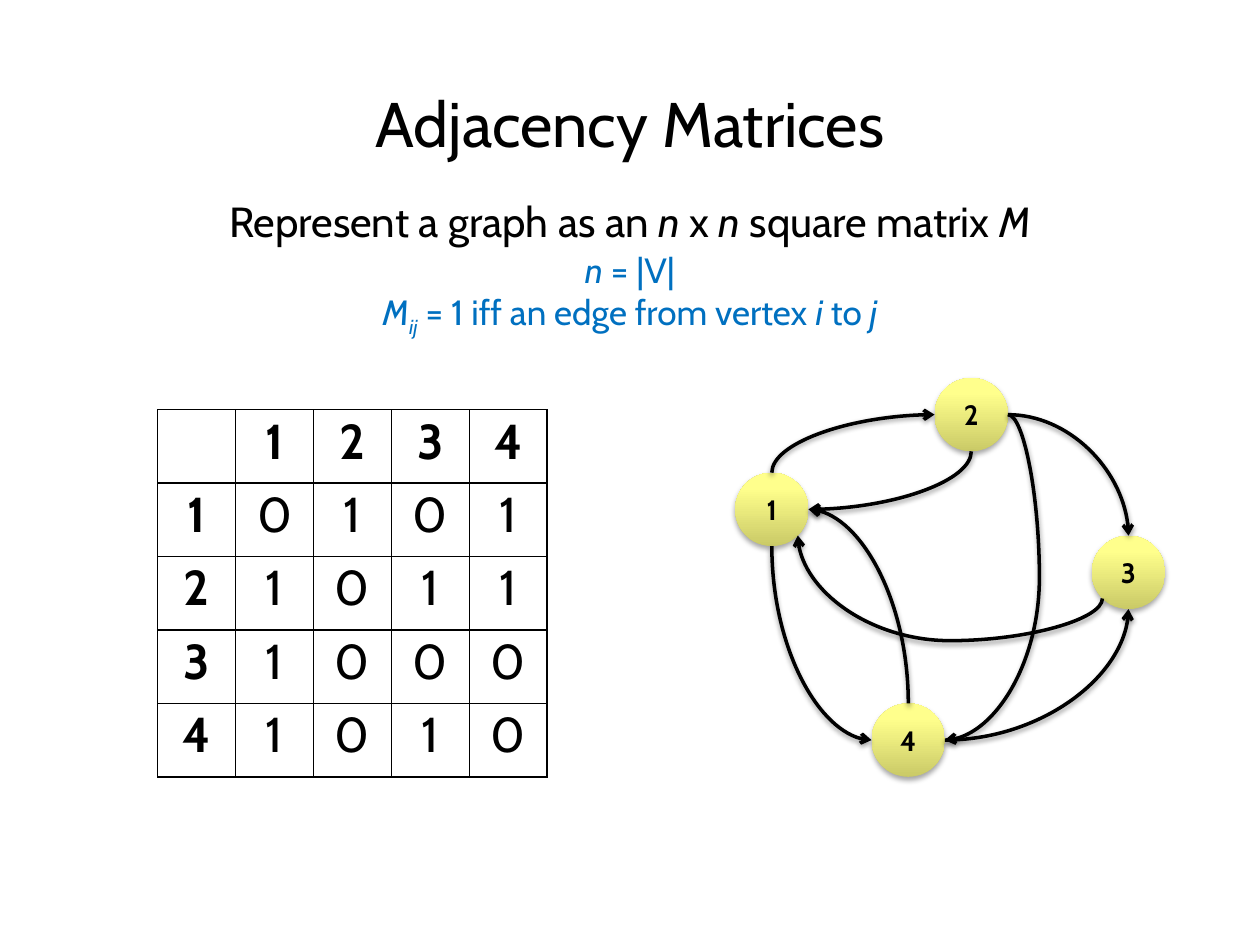
from pptx import Presentation
from pptx import util as u
from pptx.dml.color import RGBColor
from pptx.enum import shapes, text
from pptx.oxml import parse_xml
from pptx.oxml.ns import nsdecls

MATRIX = [
    [0, 1, 0, 1],
    [1, 0, 1, 1],
    [1, 0, 0, 0],
    [1, 0, 1, 0],
]
RADIUS = 0.74
VERTICES = {1: (15.56, 10.27), 2: (19.58, 8.36), 3: (22.75, 11.54), 4: (18.31, 14.92)}
DIAGONAL = 0.71
SIDES = {
    "top": (0, -1), "bottom": (0, 1), "left": (-1, 0), "right": (1, 0),
    "bottom left": (-DIAGONAL, DIAGONAL), "bottom right": (DIAGONAL, DIAGONAL),
}
# start vertex, side, end vertex, side, rotation, bend (None for a simple corner)
EDGES = [
    (1, "top", 2, "left", 90, None),
    (1, "bottom", 4, "left", 270, None),
    (2, "bottom", 1, "right", 90, None),
    (2, "right", 3, "top", 0, None),
    (2, "right", 4, "right", 0, -0.5),
    (3, "bottom left", 1, "bottom right", 90, -0.67),
    (4, "top", 1, "right", 270, None),
    (4, "right", 3, "bottom", 0, None),
]


def color(value):
    return RGBColor.from_string(value)


def drawing_xml(tag, attributes, content=""):
    """Parse one element of the DrawingML namespace."""
    return parse_xml(f'<a:{tag} {nsdecls("a")} {attributes}>{content}</a:{tag}>')


def drop_shadow(distance, opacity):
    return drawing_xml("effectLst", "", (
        f'<a:outerShdw blurRad="{u.Pt(3.1)}" dist="{u.Pt(distance)}" dir="5400000" rotWithShape="0">'
        f'<a:srgbClr val="000000"><a:alpha val="{opacity * 1000}"/></a:srgbClr></a:outerShdw>'))


def port(vertex, side):
    """Point on the rim of a vertex, in centimetres."""
    return [center + RADIUS * step for center, step in zip(VERTICES[vertex], SIDES[side])]


class SlideBuilder:
    font = "Cabin"
    ink = "000000"
    accent = "0070C0"
    gradient = [(0, "CACA67"), (80, "FFFF8C"), (100, "FFFF8E")]

    def __init__(self, slide):
        self.slide = slide

    def format(self, paragraph, size, ink=None, bold=False):
        paragraph.alignment = text.PP_ALIGN.CENTER
        for run in paragraph.runs:
            run.font.name = self.font
            run.font.size = u.Pt(size)
            run.font.bold = bold
            run.font.color.rgb = color(ink or self.ink)

    def title(self, wording, top, height):
        title = self.slide.shapes.title
        title.left, title.top = u.Cm(0), u.Cm(top)
        title.width, title.height = u.Cm(25.4), u.Cm(height)
        title.text_frame.text = wording
        title.text_frame.vertical_anchor = text.MSO_ANCHOR.MIDDLE
        self.format(title.text_frame.paragraphs[0], 36)

    def text_lines(self, top, height, lines, size, ink):
        """Add centred lines made of (wording, style) pairs."""
        box = self.slide.shapes.add_textbox(u.Cm(0), u.Cm(top), u.Cm(25.4), u.Cm(height))
        frame = box.text_frame
        frame.word_wrap = True
        for index, line in enumerate(lines):
            paragraph = frame.add_paragraph() if index else frame.paragraphs[0]
            for wording, style in line:
                run = paragraph.add_run()
                run.text = wording
                run.font.italic = style != "plain"
                if style == "subscript":
                    run.font._element.set("baseline", "-25000")
            self.format(paragraph, size, ink)

    def matrix(self, left, top, column_width, row_height, rows):
        count = len(rows)
        frame = self.slide.shapes.add_table(
            count, count, u.Cm(left), u.Cm(top), u.Cm(column_width * count), u.Cm(row_height * count))
        table = frame.table
        table.first_row = table.horz_banding = False
        for column in table.columns:
            column.width = u.Cm(column_width)
        for row_index, values in enumerate(rows):
            table.rows[row_index].height = u.Cm(row_height)
            for column_index, value in enumerate(values):
                header = row_index == 0 or column_index == 0
                self.cell(table.cell(row_index, column_index), value, header)

    def cell(self, cell, value, header):
        properties = cell._tc.get_or_add_tcPr()
        for edge in ("lnL", "lnR", "lnT", "lnB"):
            properties.append(drawing_xml(
                edge, f'w="{u.Pt(1)}"',
                f'<a:solidFill><a:srgbClr val="{self.ink}"/></a:solidFill>'))
        cell.fill.background()
        cell.vertical_anchor = text.MSO_ANCHOR.MIDDLE
        cell.text_frame.text = str(value)
        paragraph = cell.text_frame.paragraphs[0]
        paragraph.line_spacing = 0.71
        paragraph.space_before = u.Pt(8)
        self.format(paragraph, 28, bold=header)

    def vertex(self, label, center):
        left, top = (u.Cm(value - RADIUS) for value in center)
        shape = self.slide.shapes.add_shape(
            shapes.MSO_SHAPE.OVAL, left, top, u.Cm(2 * RADIUS), u.Cm(2 * RADIUS))
        shape.line.fill.background()
        stops = "".join(
            f'<a:gs pos="{position * 1000}"><a:srgbClr val="{value}"/></a:gs>'
            for position, value in self.gradient)
        properties = shape._element.spPr
        properties.insert(2, drawing_xml(
            "gradFill", 'rotWithShape="1"',
            f'<a:gsLst>{stops}</a:gsLst><a:lin ang="16200000" scaled="0"/>'))
        properties.append(drop_shadow(1.8, 35))
        frame = shape.text_frame
        frame.margin_left = frame.margin_right = frame.margin_top = frame.margin_bottom = 0
        frame.vertical_anchor = text.MSO_ANCHOR.MIDDLE
        frame.text = str(label)
        self.format(frame.paragraphs[0], 16, bold=True)

    def edge(self, start, end, rotation, bend):
        """Add a curved arrow, whose frame is laid out before it is rotated."""
        (x1, y1), (x2, y2) = start, end
        dx, dy = x2 - x1, y2 - y1
        along, across = {0: (dx, dy), 90: (dy, -dx), 270: (-dy, dx)}[rotation]
        middle_x, middle_y = (x1 + x2) / 2, (y1 + y2) / 2
        corners = [
            middle_x - along / 2, middle_y - across / 2,
            middle_x + along / 2, middle_y + across / 2]
        connector = self.slide.shapes.add_connector(
            shapes.MSO_CONNECTOR.CURVE, *(u.Cm(value) for value in corners))
        connector.line.color.rgb = color(self.ink)
        connector.line.width = u.Pt(2)
        connector.line._get_or_add_ln().append(drawing_xml("tailEnd", 'type="arrow"'))
        properties = connector._element.spPr
        properties.append(drop_shadow(1.6, 38))
        if rotation:
            properties.xfrm.set("rot", str(rotation * 60000))
        geometry = properties.prstGeom
        if bend is None:
            geometry.set("prst", "curvedConnector2")
        else:
            for guides in list(geometry):
                geometry.remove(guides)
            geometry.append(drawing_xml(
                "avLst", "", f'<a:gd name="adj1" fmla="val {round(bend * 100000)}"/>'))


def main():
    presentation = Presentation()
    presentation.slide_width, presentation.slide_height = u.Cm(25.4), u.Cm(19.05)
    builder = SlideBuilder(presentation.slides.add_slide(presentation.slide_layouts[5]))

    builder.title("Adjacency Matrices", 1.52, 1.9)
    builder.text_lines(3.81, 1.27, [[
        ("Represent a graph as an ", "plain"), ("n", "italic"), (" x ", "plain"),
        ("n", "italic"), (" square matrix ", "plain"), ("M", "italic"),
    ]], 24, builder.ink)
    builder.text_lines(4.88, 1.96, [
        [("n", "italic"), (" = |V|", "plain")],
        [("M", "italic"), ("ij", "subscript"), (" = 1 iff an edge from vertex ", "plain"),
         ("i", "italic"), (" to ", "plain"), ("j", "italic")],
    ], 20, builder.accent)

    rows = [["", *VERTICES]] + [[label, *values] for label, values in zip(VERTICES, MATRIX)]
    builder.matrix(3.18, 8.26, 1.57, 1.48, rows)

    for label, center in VERTICES.items():
        builder.vertex(label, center)
    for start, start_side, end, end_side, rotation, bend in EDGES:
        builder.edge(port(start, start_side), port(end, end_side), rotation, bend)

    presentation.save("out.pptx")


if __name__ == "__main__":
    main()
